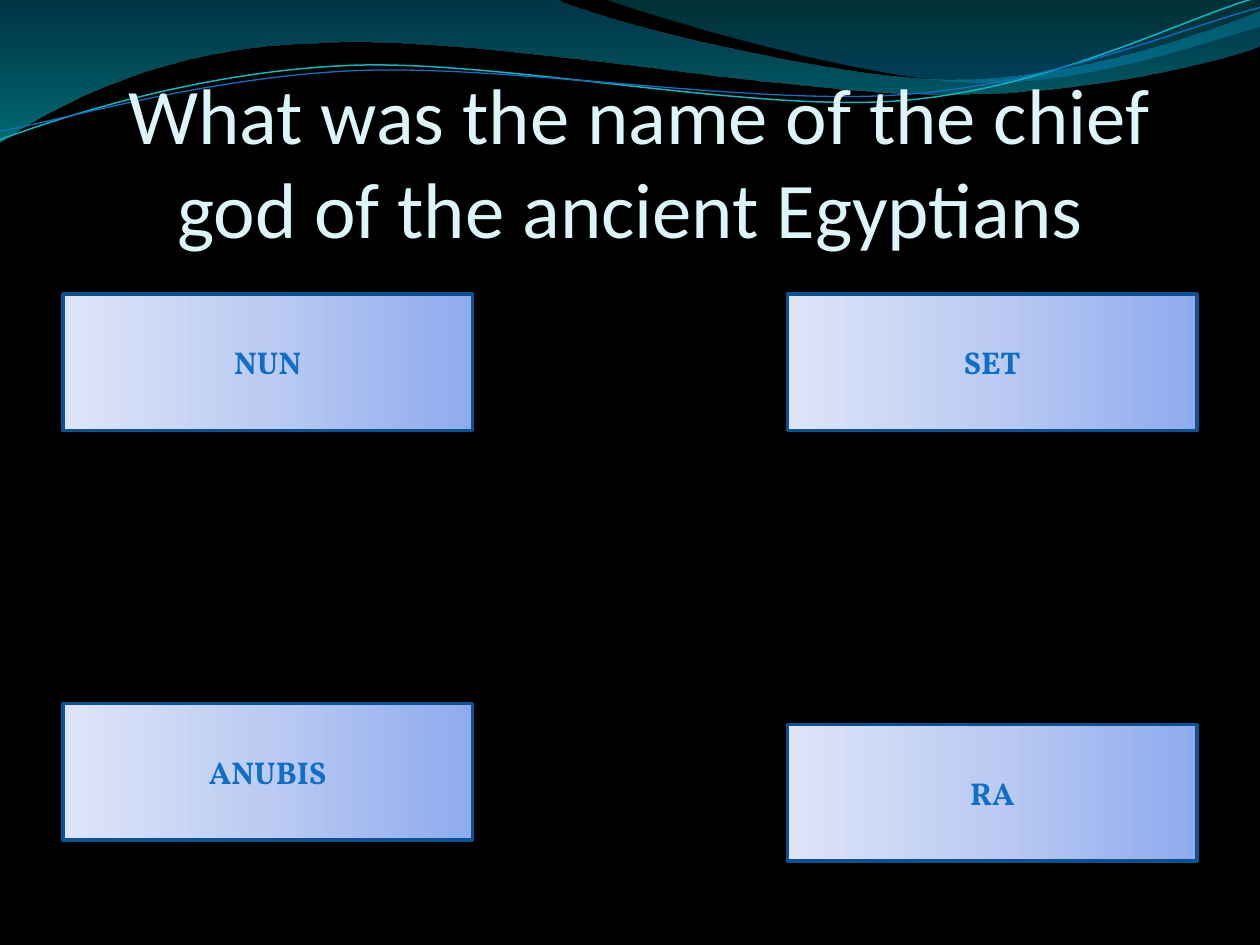
from typing import NamedTuple

from lxml.etree import SubElement
from pptx import Presentation
from pptx.dml.color import RGBColor
from pptx.enum.shapes import MSO_SHAPE
from pptx.enum.text import MSO_ANCHOR, PP_ALIGN
from pptx.oxml.ns import qn
from pptx.util import Pt

STRAND_ROTATION = 357.3


class Stop(NamedTuple):
    position: int
    color: str
    opacity: int = 100


class Wave(NamedTuple):
    """Points in pt; a step of one point is straight, of three a Bézier curve."""
    start: tuple
    steps: list
    stops: list


class Strand(NamedTuple):
    start: tuple
    steps: list
    color: str
    width: float


class Answer(NamedTuple):
    text: str
    left: float
    top: float


WAVES = [
    Wave((0, 0), [
        [(316.8, -0.7)],
        [(342.7, 12.2), (478.1, 45.4), (545.8, 45.4)],
        [(614.2, 45.4), (689.8, 18.7), (720, 6.5)],
        [(720.7, 25.9)],
        [(707.8, 31.7), (626.4, 54.7), (537.1, 54)],
        [(447.8, 54), (275, 20.2), (185, 24.5)],
        [(92.9, 25.9), (33.1, 59.8), (-0.7, 81.4)],
        [(0, 0)],
    ], [Stop(0, "0074A1", 45), Stop(100, "00C6CF", 55)]),
    Wave((344.9, -0.7), [
        [(366.5, 7.9), (491, 44.6), (553.7, 46.8)],
        [(616.3, 49.7), (691.9, 23), (720, 15.1)],
        [(720, 0)],
        [(344.9, -0.7)],
    ], [Stop(0, "00A1A9", 30), Stop(80, "008BBF", 45)]),
]
STRANDS = [
    Strand((-1.4, 62.9), [
        [(33.8, 51.7), (114.1, 29.4), (199.8, 29.9)],
        [(284.8, 30.3), (425.8, 67.3), (512.4, 64.9)],
        [(599, 62.4), (676.5, 25.7), (720.2, 15.5)],
    ], "0AB8BF", 0.85),
    Strand((-1.1, 58), [
        [(32.9, 53.8), (118.3, 32.5), (204.1, 33)],
        [(290.6, 33.4), (428.9, 63.8), (515.5, 61.4)],
        [(601.3, 59.6), (678.5, 30.1), (721.4, 21.3)],
    ], "0F6FC6", 0.75),
]
LEFT, RIGHT = 36, 450
ANSWERS = [
    Answer("NUN", LEFT, 168),
    Answer("SET", RIGHT, 168),
    Answer("ANUBIS", LEFT, 402),
    Answer("RA", RIGHT, 414),
]
ANSWER_STOPS = [Stop(0, "8EABEE"), Stop(50, "BBCBF2"), Stop(100, "DEE5F8")]


def rgb(color: str) -> RGBColor:
    return RGBColor.from_string(color)


def set_gradient(sp, stops: list, angle: int) -> None:
    """Fill a shape with a linear gradient; angle runs clockwise in degrees."""
    sp.fill.gradient()
    sp.fill.gradient_angle = 360 - angle
    gs_list = next(sp._element.iter(qn("a:gsLst")))
    for gs in list(gs_list):
        gs_list.remove(gs)
    for stop in stops:
        gs = SubElement(gs_list, qn("a:gs"), pos=str(stop.position * 1000))
        color = SubElement(gs, qn("a:srgbClr"), val=stop.color)
        if stop.opacity < 100:
            SubElement(color, qn("a:alpha"), val=str(stop.opacity * 1000))


def add_outline(shapes, start: tuple, steps: list, close: bool):
    """Build a freeform, then join each three-point step into one curve."""
    builder = shapes.build_freeform(Pt(start[0]), Pt(start[1]))
    points = [(Pt(x), Pt(y)) for step in steps for x, y in step]
    builder.add_line_segments(points, close=close)
    sp = builder.convert_to_shape()
    sp.shadow.inherit = False
    lines = iter(list(sp._element.iter(qn("a:lnTo"))))
    for step in steps:
        first, *others = [next(lines) for _ in step]
        if others:
            first.tag = qn("a:cubicBezTo")
            for line in others:
                first.append(line[0])
                line.getparent().remove(line)
    return sp


def add_wave(s, wave: Wave) -> None:
    sp = add_outline(s.shapes, wave.start, wave.steps, close=True)
    set_gradient(sp, wave.stops, 90)
    sp.line.fill.background()


def add_strand(group, strand: Strand) -> None:
    sp = add_outline(group.shapes, strand.start, strand.steps, close=False)
    sp.rotation = STRAND_ROTATION
    sp.fill.background()
    sp.line.color.rgb = rgb(strand.color)
    sp.line.width = Pt(strand.width)


def write(tf, text: str, *, size: float, font: str, color: str,
          bold: bool = False, anchor=MSO_ANCHOR.MIDDLE) -> None:
    tf.word_wrap = True
    tf.vertical_anchor = anchor
    p = tf.paragraphs[0]
    p.alignment = PP_ALIGN.CENTER
    r = p.add_run()
    r.text = text
    r.font.size = Pt(size)
    r.font.name = font
    r.font.bold = bold
    r.font.color.rgb = rgb(color)


def add_title(s, text: str) -> None:
    tf = s.shapes.add_textbox(Pt(36), Pt(55.5), Pt(648), Pt(90)).text_frame
    tf.margin_left = tf.margin_right = tf.margin_bottom = Pt(0)
    write(tf, text, size=45, font="Calibri", color="DBF5F9",
          anchor=MSO_ANCHOR.BOTTOM)


def add_answer(s, answer: Answer) -> None:
    sp = s.shapes.add_shape(MSO_SHAPE.RECTANGLE, Pt(answer.left),
                            Pt(answer.top), Pt(234), Pt(78))
    sp.shadow.inherit = False
    set_gradient(sp, ANSWER_STOPS, 180)
    sp.line.color.rgb = rgb("0B5292")
    sp.line.width = Pt(2)
    write(sp.text_frame, answer.text, size=18, font="Vollkorn",
          color="0F6FC6", bold=True)


def main() -> None:
    prs = Presentation()
    prs.slide_width, prs.slide_height = Pt(720), Pt(540)
    s = prs.slides.add_slide(prs.slide_layouts[6])
    s.background.fill.solid()
    s.background.fill.fore_color.rgb = rgb("000000")
    for wave in WAVES:
        add_wave(s, wave)
    group = s.shapes.add_group_shape()
    for strand in STRANDS:
        add_strand(group, strand)
    add_title(s, " What was the name of the chief god of the ancient Egyptians")
    for answer in ANSWERS:
        add_answer(s, answer)
    prs.save("out.pptx")


if __name__ == "__main__":
    main()
